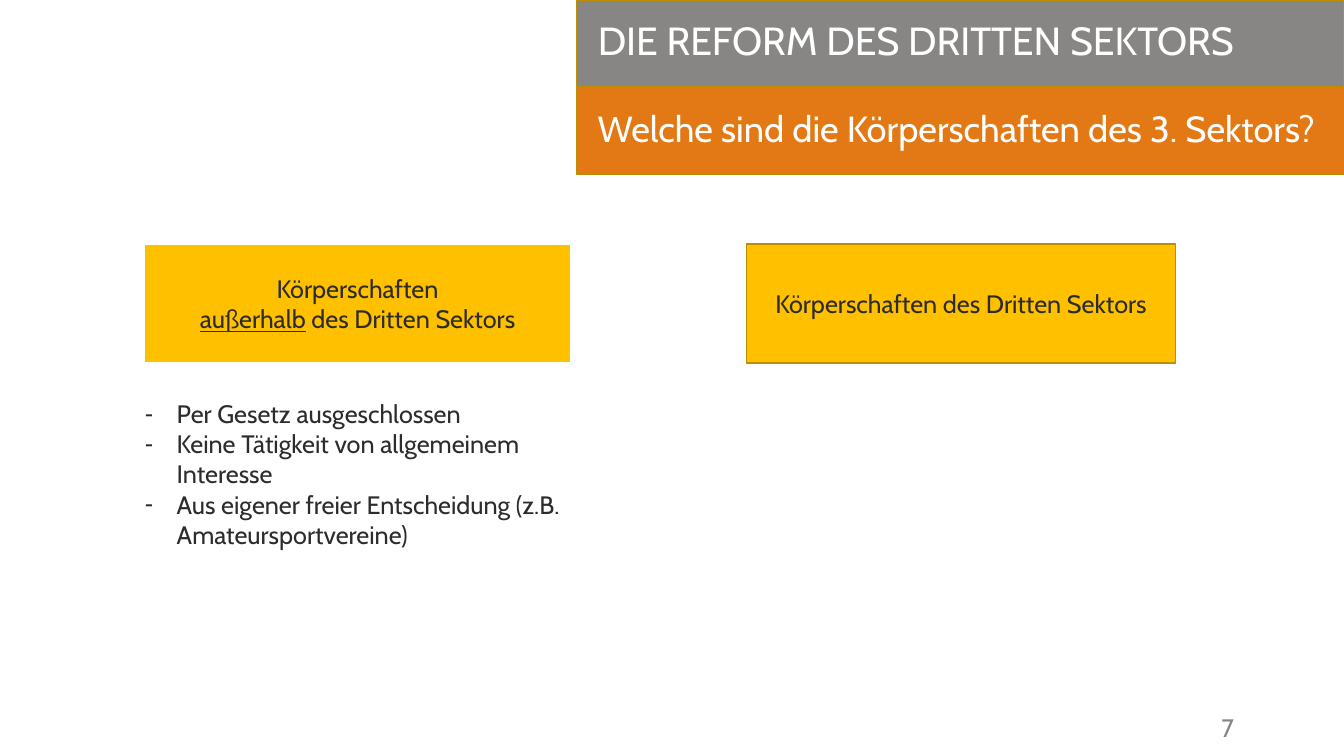
from pptx import Presentation
from pptx.dml.color import RGBColor
from pptx.enum.shapes import MSO_SHAPE
from pptx.enum.text import MSO_ANCHOR, MSO_AUTO_SIZE, PP_ALIGN
from pptx.oxml.ns import qn
from pptx.util import Cm, Pt

RECT = MSO_SHAPE.RECTANGLE
MIDDLE, TOP = MSO_ANCHOR.MIDDLE, MSO_ANCHOR.TOP
LEFT, CENTER = PP_ALIGN.LEFT, PP_ALIGN.CENTER
NO_FIT = MSO_AUTO_SIZE.NONE

COLORS = {
    "grey": "878684",
    "orange": "E37915",
    "yellow": "FFC000",
    "border": "BD8E00",
    "white": "FFFFFF",
    "text": "2C2C2C",
}


def rgb(name):
    return RGBColor.from_string(COLORS[name])


class SlideBuilder:
    font = "Cabin"

    def __init__(self, slide):
        self.s = slide

    def place(self, sp, x, y, w, h):
        sp.left, sp.top, sp.width, sp.height = Cm(x), Cm(y), Cm(w), Cm(h)

    def style(self, tf, size, color, align=LEFT, anchor=MIDDLE, spacing=1.0, wrap=True):
        tf.auto_size = NO_FIT
        tf.word_wrap = wrap
        tf.vertical_anchor = anchor
        for p in tf.paragraphs:
            p.alignment = align
            p.line_spacing = spacing
            p.space_before = Pt(0)
            for r in p.runs:
                r.font.name = self.font
                r.font.size = Pt(size)
                r.font.color.rgb = rgb(color)

    def box(self, x, y, w, h, fill, line=None, width=1):
        sp = self.s.shapes.add_shape(RECT, Cm(x), Cm(y), Cm(w), Cm(h))
        sp.shadow.inherit = False
        sp.fill.solid()
        sp.fill.fore_color.rgb = rgb(fill)
        if line:
            sp.line.color.rgb = rgb(line)
            sp.line.width = Pt(width)
        else:
            sp.line.fill.background()
        return sp

    def title(self, text, x, y, w, h):
        sp = self.s.shapes.title
        self.place(sp, x, y, w, h)
        sp.text_frame.text = text
        self.style(sp.text_frame, 28, "white", spacing=0.85)
        # Bring the title in front of its band
        sp.element.getparent().append(sp.element)

    def subtitle(self, text, x, y, w, h):
        tf = self.box(x, y, w, h, "orange").text_frame
        tf.text = text
        self.style(tf, 25.9, "white", spacing=0.85)

    def heading(self, text, x, line, width, underlined=""):
        tf = self.box(x, 6.15, 10.8, 3, "yellow", line, width).text_frame
        tf.text = text
        if underlined:
            p = tf.paragraphs[-1]
            r = p.runs[0]
            rest = r.text.removeprefix(underlined)
            r.text = underlined
            r.font.underline = True
            p.add_run().text = rest
        self.style(tf, 18, "text", CENTER)

    def dash_list(self, items, x, y, w, h):
        sp = self.s.placeholders[1]
        self.place(sp, x, y, w, h)
        tf = sp.text_frame
        tf.text = "\n".join(items)
        for p in tf.paragraphs:
            pPr = p._p.get_or_add_pPr()
            pPr.set("marL", str(Cm(0.8)))
            pPr.set("indent", str(-Cm(0.8)))
            pPr.append(pPr.makeelement(qn("a:buChar"), {"char": "-"}))
        self.style(tf, 18, "text", anchor=TOP)

    def page_number(self, text, x, y, w, h):
        tf = self.s.shapes.add_textbox(Cm(x), Cm(y), Cm(w), Cm(h)).text_frame
        tf.text = text
        self.style(tf, 18, "grey", anchor=TOP, wrap=False)


def main():
    prs = Presentation()
    prs.slide_width, prs.slide_height = Cm(33.87), Cm(19.05)
    b = SlideBuilder(prs.slides.add_slide(prs.slide_layouts[1]))

    # Header bands
    b.box(14.53, 0, 19.34, 2.18, "grey", "border")
    b.title("DIE REFORM DES DRITTEN SEKTORS", 14.81, 0.2, 19.05, 1.78)
    b.box(14.53, 2.21, 19.34, 2.18, "orange", "border")
    b.subtitle("Welche sind die Körperschaften des 3. Sektors?", 14.81, 2.41, 19.05, 1.78)

    # Two groups of organisations
    b.heading("Körperschaften des Dritten Sektors", 18.82, "border", 1)
    b.heading("Körperschaften\naußerhalb des Dritten Sektors", 3.61, "white", 2, "außerhalb")

    # Reasons for being outside the sector
    b.dash_list([
        "Per Gesetz ausgeschlossen",
        "Keine Tätigkeit von allgemeinem Interesse",
        "Aus eigener freier Entscheidung (z.B. Amateursportvereine)",
    ], 3.4, 9.91, 11, 4.11)

    # Footer
    b.page_number("7", 30.53, 17.83, 1.68, 1.02)

    prs.save("out.pptx")


if __name__ == "__main__":
    main()
